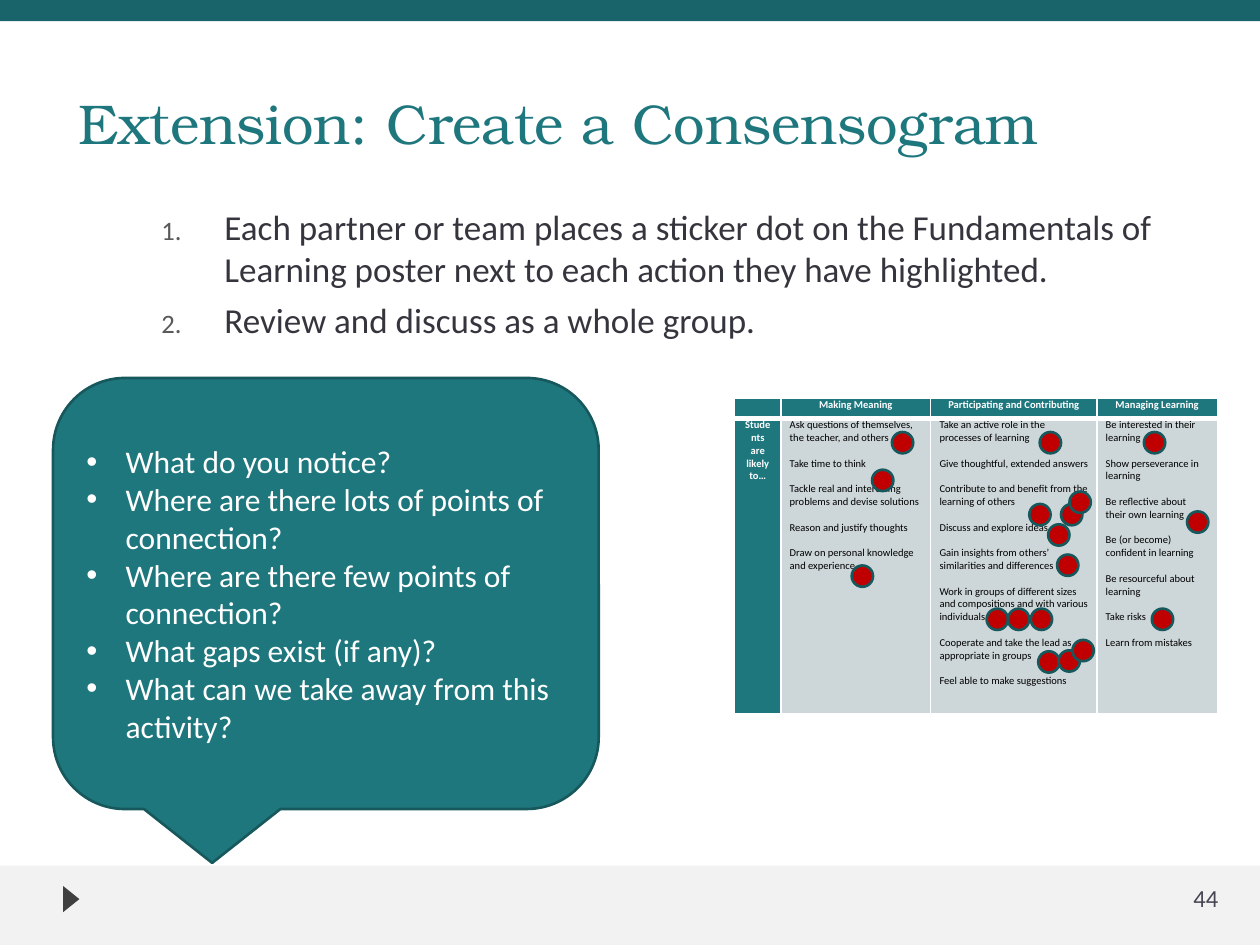
from dataclasses import dataclass

from lxml import etree
from pptx import Presentation
from pptx import util as u
from pptx.dml.color import RGBColor
from pptx.enum import shapes, text
from pptx.oxml import ns


@dataclass(frozen=True)
class Theme:
    teal: str = "1F777E"
    deep: str = "19646B"
    edge: str = "17585D"
    pale: str = "F2F2F2"
    cell: str = "CDD6D8"
    red: str = "C00000"
    ink: str = "35353E"
    mark: str = "595959"
    arrow: str = "3F3F3F"
    page: str = "464653"
    white: str = "FFFFFF"
    black: str = "000000"
    serif: str = "TeX Gyre Bonum"
    sans: str = "Calibri"
    head: float = 32
    body: float = 20
    talk: float = 18
    foot: float = 14
    tiny: float = 6
    gap: float = 7.3


STEPS = [
    "Each partner or team places a sticker dot on the Fundamentals of Learning "
    "poster next to each action they have highlighted.",
    "Review and discuss as a whole group.",
]
ASKS = [
    "What do you notice?",
    "Where are there lots of points of connection?",
    "Where are there few points of connection?",
    "What gaps exist (if any)?",
    "What can we take away from this activity?",
]
HEADS = ["", "Making Meaning", "Participating and Contributing", "Managing Learning"]
ACTS = [
    ["Students are likely to…"],
    ["Ask questions of themselves, the teacher, and others",
     "Take time to think",
     "Tackle real and interesting problems and devise solutions",
     "Reason and justify thoughts",
     "Draw on personal knowledge\nand experience"],
    ["Take an active role in the processes of learning",
     "Give thoughtful, extended answers",
     "Contribute to and benefit from the learning of others",
     "Discuss and explore ideas",
     "Gain insights from others’ similarities and differences",
     "Work in groups of different sizes and compositions and with various individuals",
     "Cooperate and take the lead as\nappropriate in groups",
     "Feel able to make suggestions"],
    ["Be interested in their learning",
     "Show perseverance in learning",
     "Be reflective about their own learning",
     "Be (or become) confident in learning",
     "Be resourceful about learning",
     "Take risks",
     "Learn from mistakes"],
]
# Sticker rows: top, then the left edge of each dot
DOTS = [
    (8.71, [17.98, 20.96, 23.06]),
    (9.47, [17.58]),
    (11.4, [17.17]),
    (10.16, [20.75, 21.39]),
    (9.91, [21.56]),
    (12.27, [19.89, 20.32, 20.78, 23.22]),
    (10.31, [23.93]),
    (10.57, [21.13]),
    (11.18, [21.31]),
    (13.13, [20.93]),
    (13.11, [21.34]),
    (12.9, [21.62]),
]


def apply(obj, fmt):
    for key, val in fmt.items():
        setattr(obj, key, val)


def add(node, tag, **attrs):
    return etree.SubElement(node, ns.qn(tag), attrs)


class Deck:
    def __init__(self, theme):
        self.t = theme
        self.prs = Presentation()
        apply(self.prs, {"slide_width": u.Cm(25.4), "slide_height": u.Cm(19.05)})
        self.slide = self.prs.slides.add_slide(self.prs.slide_layouts[1])

    def place(self, shape, box):
        keys = ("left", "top", "width", "height")
        apply(shape, dict(zip(keys, map(u.Cm, box))))

    def words(self, para, line, size, color, face=None, bold=False):
        run = para.add_run()
        run.text = line
        apply(run.font, {"size": u.Pt(size), "name": face or self.t.sans, "bold": bold})
        run.font.color.rgb = RGBColor.from_string(color)

    def lines(self, frame, items):
        """Yield an empty paragraph with each item."""
        for i, item in enumerate(items):
            yield frame.paragraphs[0] if i == 0 else frame.add_paragraph(), item

    def hang(self, para, left, step):
        """Give a hanging indent and return the paragraph properties."""
        props = para._p.get_or_add_pPr()
        props.set("marL", str(u.Cm(left)))
        props.set("indent", str(-u.Cm(step)))
        return props

    def title(self, line, box):
        shape = self.slide.shapes.title
        self.place(shape, box)
        apply(shape.text_frame, {"vertical_anchor": text.MSO_ANCHOR.BOTTOM,
                                 "auto_size": text.MSO_AUTO_SIZE.NONE})
        para = shape.text_frame.paragraphs[0]
        para.alignment = text.PP_ALIGN.LEFT
        self.words(para, line, self.t.head, self.t.teal, self.t.serif)

    def steps(self, items, box):
        shape = self.slide.placeholders[1]
        self.place(shape, box)
        shape.text_frame.auto_size = text.MSO_AUTO_SIZE.NONE
        for i, (para, item) in enumerate(self.lines(shape.text_frame, items)):
            apply(para, {"level": 2, "space_before": u.Pt(5 if i else 0)})
            props = self.hang(para, 2.57, 1.27)
            add(add(props, "a:buClr"), "a:srgbClr", val=self.t.mark)
            add(props, "a:buSzPct", val="76000")
            add(props, "a:buFont", typeface=self.t.sans)
            add(props, "a:buAutoNum", type="arabicPeriod")
            self.words(para, item, self.t.body, self.t.ink)

    def shape(self, kind, box, fill, edge=None, turn=0):
        item = self.slide.shapes.add_shape(kind, *map(u.Cm, box))
        item.shadow.inherit = False
        item.rotation = turn
        item.fill.solid()
        item.fill.fore_color.rgb = RGBColor.from_string(fill)
        if edge:
            item.line.color.rgb = RGBColor.from_string(edge)
            item.line.width = u.Pt(1.5)
        else:
            item.line.fill.background()
        return item

    def callout(self, items, box):
        kind = shapes.MSO_SHAPE.ROUNDED_RECTANGULAR_CALLOUT
        frame = self.shape(kind, box, self.t.teal, self.t.edge).text_frame
        apply(frame, {"word_wrap": True, "vertical_anchor": text.MSO_ANCHOR.MIDDLE})
        for para, item in self.lines(frame, items):
            para.alignment = text.PP_ALIGN.LEFT
            props = self.hang(para, 0.79, 0.79)
            add(props, "a:buFont", typeface="Arial")
            add(props, "a:buChar", char="•")
            self.words(para, item, self.t.talk, self.t.white)

    def label(self, line, box):
        frame = self.slide.shapes.add_textbox(*map(u.Cm, box)).text_frame
        apply(frame, {"word_wrap": True, "vertical_anchor": text.MSO_ANCHOR.BOTTOM,
                      "margin_right": 0, "margin_bottom": 0})
        para = frame.paragraphs[0]
        para.alignment = text.PP_ALIGN.RIGHT
        self.words(para, line, self.t.foot, self.t.page)

    def cell(self, cell, items, head, top, base):
        """Fill one cell; top and base are its border widths in points."""
        props = cell._tc.get_or_add_tcPr()
        for side, width in zip("LRTB", (1, 1, top, base)):
            line = add(props, f"a:ln{side}", w=str(u.Pt(width)))
            add(add(line, "a:solidFill"), "a:srgbClr", val=self.t.white)
        cell.fill.solid()
        cell.fill.fore_color.rgb = RGBColor.from_string(self.t.teal if head else self.t.cell)
        apply(cell, {"margin_left": u.Cm(0.18), "margin_right": u.Cm(0.18),
                     "margin_top": 0, "margin_bottom": 0})
        rows = [(part, i and not j) for i, item in enumerate(items)
                for j, part in enumerate(item.split("\n"))]
        for para, (part, gap) in self.lines(cell.text_frame, rows):
            para.alignment = text.PP_ALIGN.CENTER if head else text.PP_ALIGN.LEFT
            para.space_before = u.Pt(self.t.gap if gap else 0)
            if part:
                color = self.t.white if head else self.t.black
                self.words(para, part, self.t.tiny, color, bold=head)
            else:
                add(para._p, "a:endParaRPr", sz=str(self.t.tiny * 100))

    def table(self, heads, acts, spot, wide, high):
        box = (*spot, sum(wide), sum(high))
        grid = self.slide.shapes.add_table(2, len(wide), *map(u.Cm, box)).table
        grid.horz_banding = False
        for row, size in zip(grid.rows, high):
            row.height = u.Cm(size)
        for i, size in enumerate(wide):
            grid.columns[i].width = u.Cm(size)
            self.cell(grid.cell(0, i), [heads[i]], True, 1, 3)
            self.cell(grid.cell(1, i), acts[i], i == 0, 3, 1)


def main():
    t = Theme()
    deck = Deck(t)
    kind = shapes.MSO_SHAPE
    deck.shape(kind.RECTANGLE, (0, 17.45, 25.4, 1.6), t.pale)
    deck.shape(kind.RECTANGLE, (0, 0, 25.4, 0.43), t.deep)
    deck.shape(kind.ISOSCELES_TRIANGLE, (1.17, 17.96, 0.53, 0.33), t.arrow, turn=90)
    deck.steps(STEPS, (1.7, 4.01, 22.83, 11))
    deck.title("Extension: Create a Consensogram", (1.32, 0.43, 22.91, 2.84))
    deck.label("44", (22.56, 17.6, 2, 0.8))
    deck.callout(ASKS, (1.07, 7.62, 11, 8.69))
    deck.table(HEADS, ACTS, (14.81, 8.03), (0.93, 3.02, 3.35, 2.43), (0.41, 5.94))
    for top, lefts in DOTS:
        for left in lefts:
            deck.shape(kind.OVAL, (left, top, 0.43, 0.43), t.red, t.edge)
    deck.prs.save("out.pptx")


if __name__ == "__main__":
    main()
